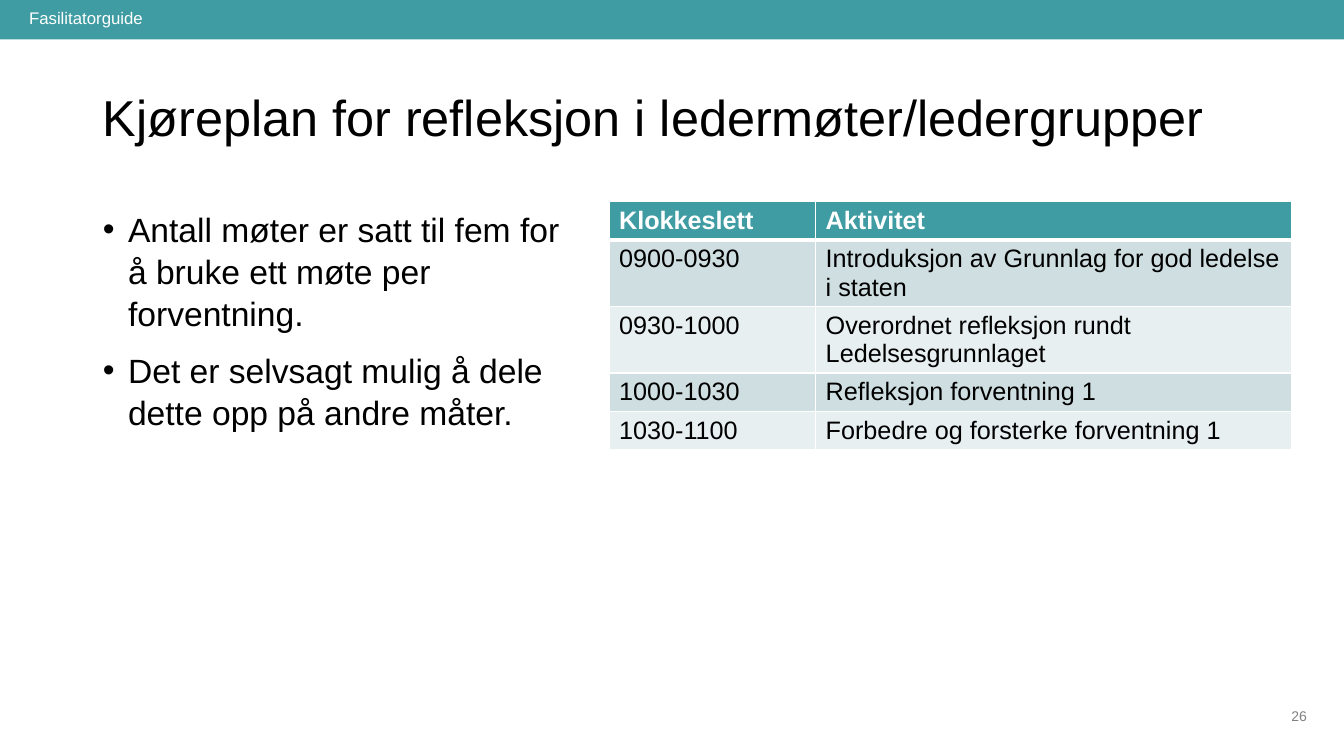
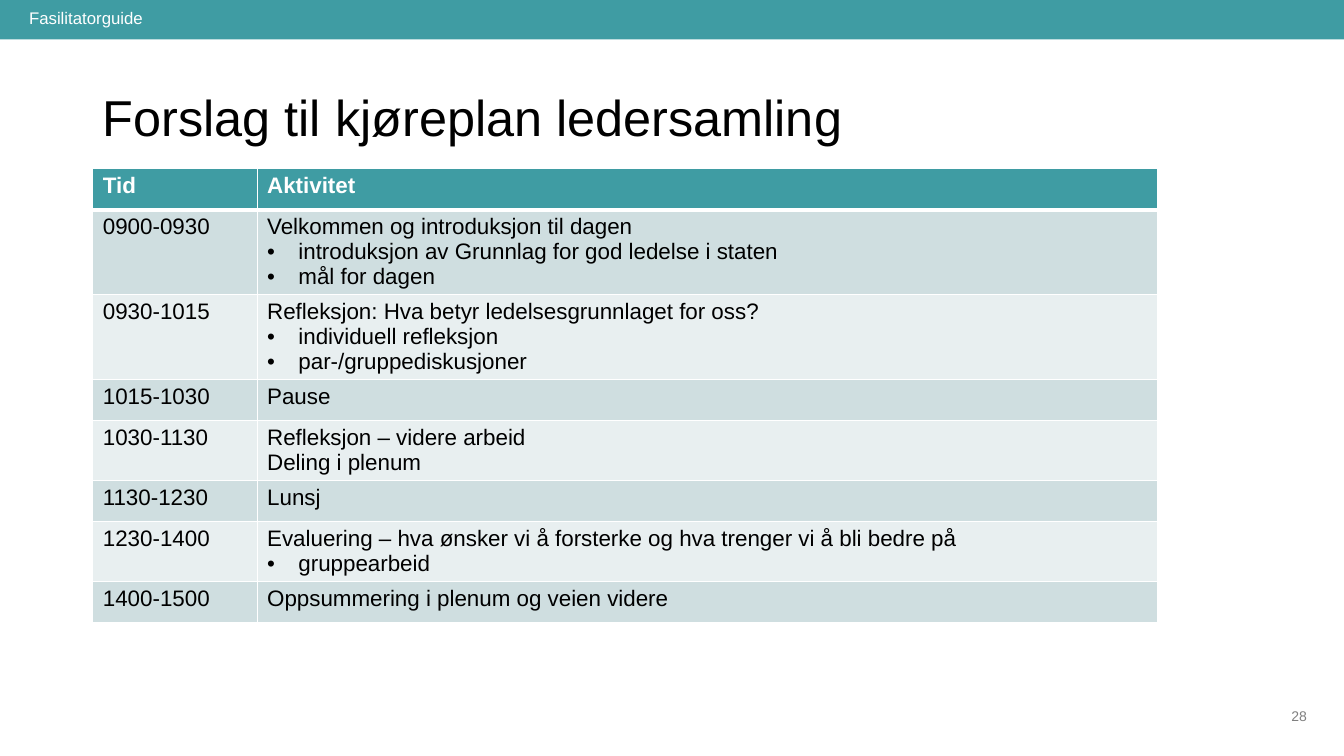
from dataclasses import dataclass

from pptx import Presentation
from pptx.dml.color import RGBColor
from pptx.enum.shapes import MSO_SHAPE
from pptx.enum.text import MSO_ANCHOR, MSO_AUTO_SIZE, PP_ALIGN
from pptx.oxml import parse_xml
from pptx.oxml.ns import nsdecls
from pptx.util import Inches, Pt

RECTANGLE = MSO_SHAPE.RECTANGLE
LEFT, CENTER = PP_ALIGN.LEFT, PP_ALIGN.CENTER
TOP, MIDDLE = MSO_ANCHOR.TOP, MSO_ANCHOR.MIDDLE
NO_FIT = MSO_AUTO_SIZE.NONE
TITLE_AND_CONTENT, TITLE_ONLY = 1, 5


@dataclass(frozen=True)
class Theme:
    font: str = "Arial"
    teal: str = "3F9CA3"
    row_dark: str = "CFDEE0"
    row_light: str = "E8EFF0"
    white: str = "FFFFFF"
    black: str = "000000"
    grey: str = "808080"
    title_size: int = 36
    body_size: int = 24
    label_size: int = 12
    number_size: int = 10


THEME = Theme()

# Each row: time, plain lines, bulleted lines, height
PAGES = [
    {
        "title": "Kjøreplan for refleksjon i ledermøter/ledergrupper",
        "title_width": 11.44,
        "number": "26",
        "bullets": [
            "Antall møter er satt til fem for å bruke ett møte per forventning.",
            "Det er selvsagt mulig å dele dette opp på andre måter.",
        ],
        "table_at": (6.04, 2),
        "columns": (2.05, 4.72),
        "size": 18,
        "rows": [
            ("Klokkeslett", ["Aktivitet"], [], 0.38),
            ("0900-0930", ["Introduksjon av Grunnlag for god ledelse i staten"], [], 0.66),
            ("0930-1000", ["Overordnet refleksjon rundt Ledelsesgrunnlaget"], [], 0.66),
            ("1000-1030", ["Refleksjon forventning 1"], [], 0.38),
            ("1030-1100", ["Forbedre og forsterke forventning 1"], [], 0.38),
        ],
    },
    {
        "title": "Forslag til kjøreplan ledersamling",
        "title_width": 9.84,
        "number": "28",
        "bullets": [],
        "table_at": (0.92, 1.67),
        "columns": (1.63, 8.93),
        "size": 16,
        "rows": [
            ("Tid", ["Aktivitet"], [], 0.41),
            ("0900-0930", ["Velkommen og introduksjon til dagen"],
             ["introduksjon av Grunnlag for god ledelse i staten", "mål for dagen"], 0.84),
            ("0930-1015", ["Refleksjon: Hva betyr ledelsesgrunnlaget for oss?"],
             ["individuell refleksjon", "par-/gruppediskusjoner"], 0.84),
            ("1015-1030", ["Pause"], [], 0.41),
            ("1030-1130", ["Refleksjon – videre arbeid", "Deling i plenum"], [], 0.59),
            ("1130-1230", ["Lunsj"], [], 0.41),
            ("1230-1400",
             ["Evaluering – hva ønsker vi å forsterke og hva trenger vi å bli bedre på"],
             ["gruppearbeid"], 0.59),
            ("1400-1500", ["Oppsummering i plenum og veien videre"], [], 0.41),
        ],
    },
]


def write(frame, lines, size, color, bold=False, indent=0.25, **layout):
    """Fill a text frame with (text, bulleted) lines; layout holds paragraph settings."""
    for index, (text, bulleted) in enumerate(lines):
        para = frame.paragraphs[0] if index == 0 else frame.add_paragraph()
        para.text = text
        if bulleted:
            properties = para._p.get_or_add_pPr()
            properties.set("marL", str(Inches(indent)))
            properties.set("indent", str(-Inches(indent)))
            properties.append(parse_xml(f'<a:buFont {nsdecls("a")} typeface="Arial"/>'))
            properties.append(parse_xml(f'<a:buChar {nsdecls("a")} char="•"/>'))
        for name, value in {"alignment": LEFT, "space_before": Pt(0), **layout}.items():
            setattr(para, name, value)
        if index == 0:
            para.space_before = Pt(0)
        span = para.runs[0]
        formats = {"name": THEME.font, "size": Pt(size), "bold": bold}
        for name, value in formats.items():
            setattr(span.font, name, value)
        span.font.color.rgb = RGBColor.from_string(color)


def place(box, left, top, width, height, anchor=TOP):
    """Set a text shape's position and frame behaviour, and return its frame."""
    box.left, box.top = Inches(left), Inches(top)
    box.width, box.height = Inches(width), Inches(height)
    frame = box.text_frame
    for name, value in {"word_wrap": True, "auto_size": NO_FIT, "vertical_anchor": anchor}.items():
        setattr(frame, name, value)
    return frame


deck = Presentation()
deck.slide_width, deck.slide_height = Inches(13.33), Inches(7.5)

for content in PAGES:
    layout_index = TITLE_AND_CONTENT if content["bullets"] else TITLE_ONLY
    page = deck.slides.add_slide(deck.slide_layouts[layout_index])

    # Title
    frame = place(page.shapes.title, 0.92, 0.4, content["title_width"], 1.45, MIDDLE)
    write(frame, [(content["title"], False)], THEME.title_size, THEME.black, line_spacing=1.1)

    # Bullet list
    if content["bullets"]:
        frame = place(page.placeholders[1], 0.92, 2, 4.85, 4.49)
        write(frame, [(text, True) for text in content["bullets"]], THEME.body_size,
              THEME.black, space_before=Pt(10), line_spacing=1.05)

    # Schedule table
    rows, columns = content["rows"], content["columns"]
    left, top = content["table_at"]
    height = sum(row[-1] for row in rows)
    table = page.shapes.add_table(len(rows), len(columns), Inches(left), Inches(top),
                                  Inches(sum(columns)), Inches(height)).table
    for column, width in zip(table.columns, columns):
        column.width = Inches(width)
    for row_index, (time, plain, bulleted, row_height) in enumerate(rows):
        table.rows[row_index].height = Inches(row_height)
        header = row_index == 0
        band = THEME.row_dark if row_index % 2 else THEME.row_light
        activity = [(text, False) for text in plain] + [(text, True) for text in bulleted]
        for column_index, lines in enumerate([[(time, False)], activity]):
            cell = table.cell(row_index, column_index)
            write(cell.text_frame, lines, content["size"],
                  THEME.white if header else THEME.black, bold=header, indent=0.31)
            borders = {"lnL": 1, "lnR": 1, "lnT": 3 if row_index == 1 else 1,
                       "lnB": 3 if header else 1}
            for side, points in borders.items():
                cell._tc.get_or_add_tcPr().append(parse_xml(
                    f'<a:{side} {nsdecls("a")} w="{Pt(points)}"><a:solidFill>'
                    f'<a:srgbClr val="{THEME.white}"/></a:solidFill></a:{side}>'))
            cell.fill.solid()
            cell.fill.fore_color.rgb = RGBColor.from_string(THEME.teal if header else band)

    # Top band and its label
    top_band = page.shapes.add_shape(RECTANGLE, 0, 0, deck.slide_width, Inches(0.39))
    top_band.shadow.inherit = False
    top_band.fill.solid()
    top_band.fill.fore_color.rgb = RGBColor.from_string(THEME.teal)
    top_band.line.fill.background()
    frame = place(page.shapes.add_textbox(0, 0, 0, 0), 0.19, 0.03, 1.48, 0.3)
    write(frame, [("Fasilitatorguide", False)], THEME.label_size, THEME.white)

    # Page number
    frame = place(page.shapes.add_textbox(0, 0, 0, 0), 12.64, 6.91, 0.49, 0.39, MIDDLE)
    write(frame, [(content["number"], False)], THEME.number_size, THEME.grey, alignment=CENTER)

deck.save("out.pptx")
